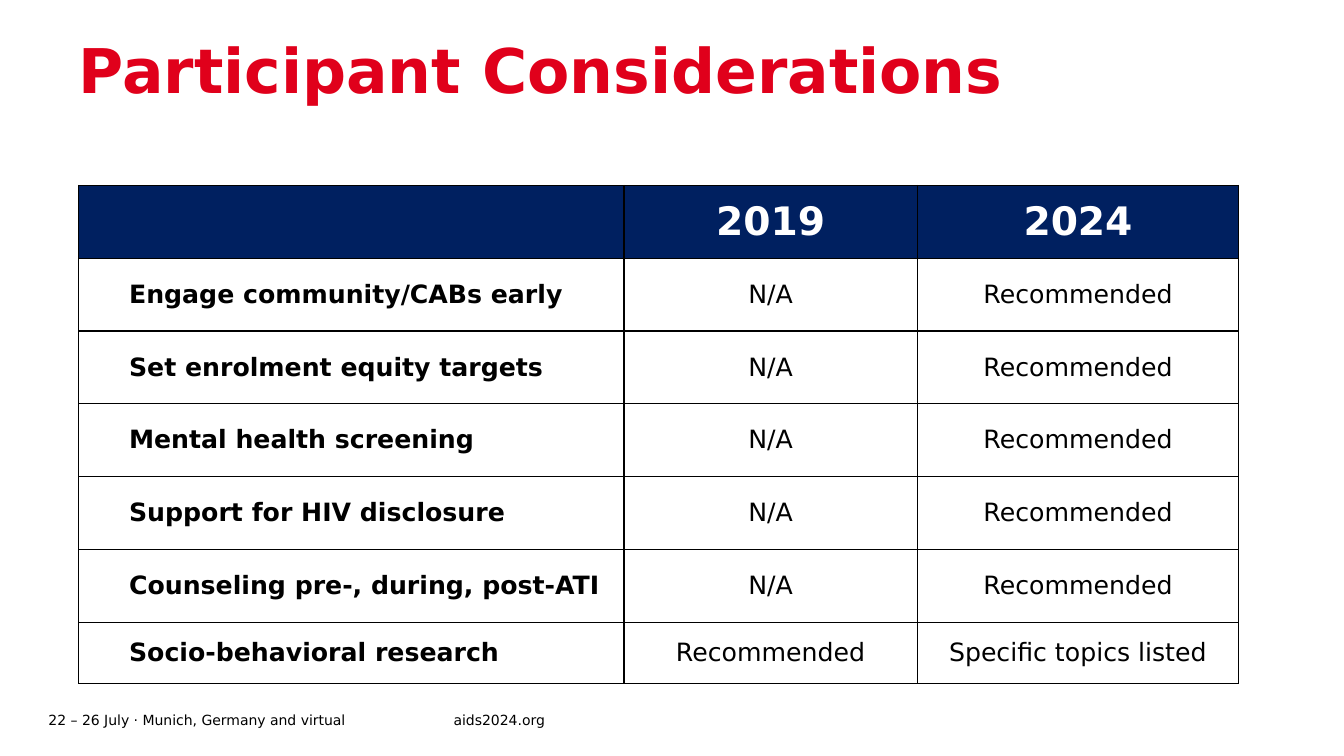
from dataclasses import dataclass

from lxml import etree
from pptx import Presentation
from pptx.dml.color import RGBColor
from pptx.enum.text import MSO_ANCHOR, PP_ALIGN
from pptx.oxml.ns import qn
from pptx.slide import Slide
from pptx.table import _Cell
from pptx.text.text import _Paragraph
from pptx.util import Pt

TOP, MIDDLE = MSO_ANCHOR.TOP, MSO_ANCHOR.MIDDLE
LEFT, CENTER = PP_ALIGN.LEFT, PP_ALIGN.CENTER

FONT = "DejaVu Sans"
COLORS = {"red": "E0001B", "navy": "002060", "white": "FFFFFF", "black": "000000"}

TABLE_LEFT, TABLE_TOP = 56.2, 132.5
COLUMN_WIDTHS = [389.5, 209.5, 229.7]
ROW_HEIGHT, LAST_ROW_HEIGHT = 52, 44
LABEL_INDENT = 36
BORDER_WIDTH = 1

ROWS = [
    ("", "2019", "2024"),
    ("Engage community/CABs early", "N/A", "Recommended"),
    ("Set enrolment equity targets", "N/A", "Recommended"),
    ("Mental health screening", "N/A", "Recommended"),
    ("Support for HIV disclosure", "N/A", "Recommended"),
    ("Counseling pre-, during, post-ATI", "N/A", "Recommended"),
    ("Socio-behavioral research", "Recommended", "Specific topics listed"),
]


@dataclass(frozen=True)
class TextStyle:
    size: float
    color: str = "black"
    bold: bool = False
    align: PP_ALIGN = LEFT


@dataclass(frozen=True)
class Label:
    text: str
    left: float
    top: float
    width: float
    height: float
    style: TextStyle
    anchor: MSO_ANCHOR = MIDDLE
    inset_top: float = 0
    line_spacing: float = 1.0


FOOTER = TextStyle(10)
HEADER = TextStyle(28, "white", True, CENTER)
ROW_LABEL = TextStyle(18, bold=True)
VALUE = TextStyle(18, align=CENTER)

LABELS = [
    Label("22 – 26 July · Munich, Germany and virtual", 34.6, 505.5, 289.4, 17.3, FOOTER),
    Label("aids2024.org", 324, 505.5, 139, 17.3, FOOTER),
    Label("Participant Considerations", 56.2, 26.6, 694.8, 96.5,
          TextStyle(44, "red", True), TOP, 2, 0.9),
]


def rgb(name: str) -> RGBColor:
    return RGBColor.from_string(COLORS[name])


def format_paragraph(p: _Paragraph, style: TextStyle) -> None:
    p.alignment = style.align
    for r in p.runs:
        r.font.name = FONT
        r.font.size = Pt(style.size)
        r.font.bold = style.bold
        r.font.color.rgb = rgb(style.color)


def add_label(s: Slide, label: Label) -> None:
    box = s.shapes.add_textbox(Pt(label.left), Pt(label.top), Pt(label.width), Pt(label.height))
    tf = box.text_frame
    tf.word_wrap = True
    tf.vertical_anchor = label.anchor
    tf.margin_left = tf.margin_right = tf.margin_bottom = 0
    tf.margin_top = Pt(label.inset_top)
    tf.text = label.text
    p = tf.paragraphs[0]
    p.line_spacing = label.line_spacing
    format_paragraph(p, label.style)


def add_borders(cell: _Cell) -> None:
    properties = cell._tc.get_or_add_tcPr()
    for index, side in enumerate(("a:lnL", "a:lnR", "a:lnT", "a:lnB")):
        line = etree.Element(qn(side), w=str(Pt(BORDER_WIDTH)))
        fill = etree.SubElement(line, qn("a:solidFill"))
        etree.SubElement(fill, qn("a:srgbClr"), val=COLORS["black"])
        properties.insert(index, line)


def fill_cell(cell: _Cell, text: str, style: TextStyle, fill: str) -> None:
    cell.fill.solid()
    cell.fill.fore_color.rgb = rgb(fill)
    cell.vertical_anchor = MIDDLE
    cell.text_frame.text = text
    format_paragraph(cell.text_frame.paragraphs[0], style)
    add_borders(cell)


def add_comparison_table(s: Slide) -> None:
    heights = [ROW_HEIGHT] * (len(ROWS) - 1) + [LAST_ROW_HEIGHT]
    table = s.shapes.add_table(
        len(ROWS), len(COLUMN_WIDTHS), Pt(TABLE_LEFT), Pt(TABLE_TOP),
        Pt(sum(COLUMN_WIDTHS)), Pt(sum(heights)),
    ).table
    table.horz_banding = False
    for column, width in zip(table.columns, COLUMN_WIDTHS):
        column.width = Pt(width)
    for i, (height, texts) in enumerate(zip(heights, ROWS)):
        table.rows[i].height = Pt(height)
        for j, text in enumerate(texts):
            cell = table.cell(i, j)
            if i == 0:
                fill_cell(cell, text, HEADER, "navy")
            elif j == 0:
                fill_cell(cell, text, ROW_LABEL, "white")
                cell.margin_left = Pt(LABEL_INDENT)
            else:
                fill_cell(cell, text, VALUE, "white")


def main() -> None:
    prs = Presentation()
    prs.slide_width, prs.slide_height = Pt(960), Pt(540)
    s = prs.slides.add_slide(prs.slide_layouts[6])
    for label in LABELS:
        add_label(s, label)
    add_comparison_table(s)
    prs.save("out.pptx")


if __name__ == "__main__":
    main()
